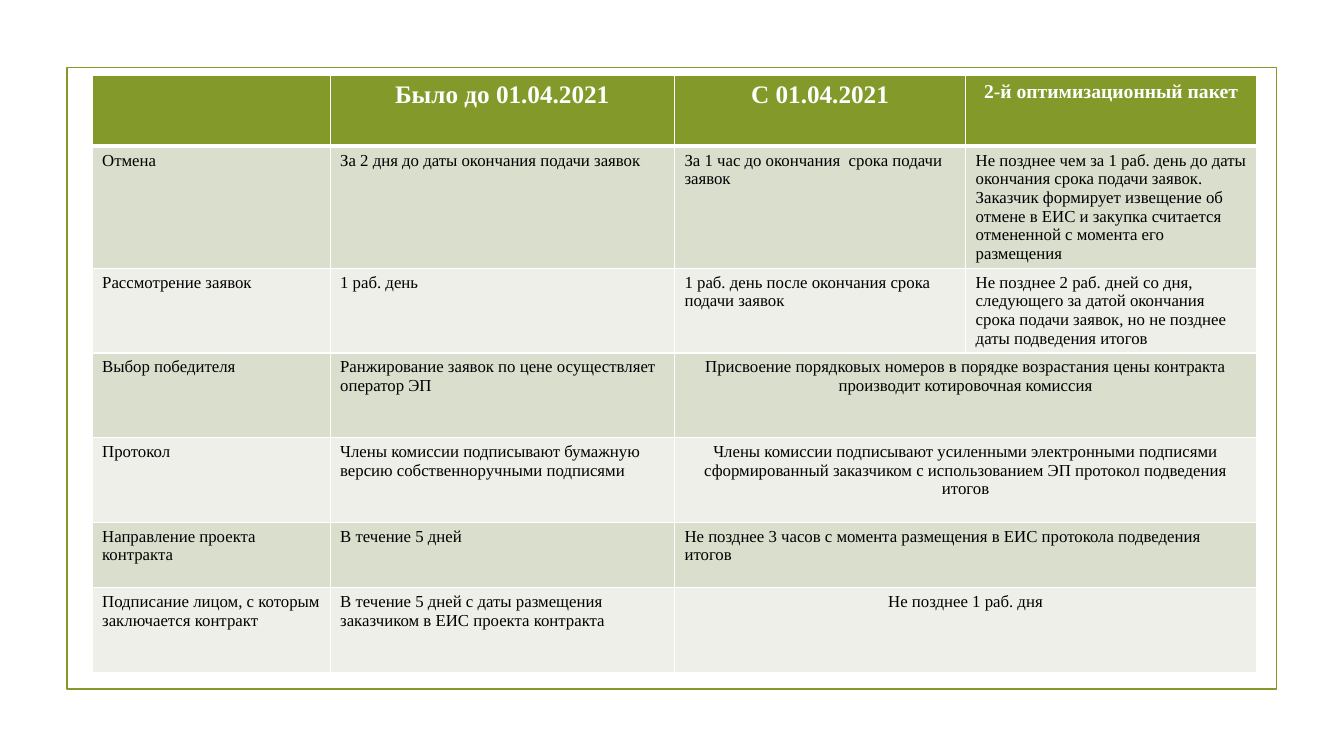
import pptx
import pptx.dml.color
import pptx.enum.shapes
import pptx.enum.text
import pptx.oxml
import pptx.oxml.ns
import pptx.util

Pt = pptx.util.Pt
CENTER = pptx.enum.text.PP_ALIGN.CENTER
LEFT = pptx.enum.text.PP_ALIGN.LEFT
FONT = "Times New Roman"
GREEN, WHITE, BLACK = "83992A", "FFFFFF", "000000"
BANDS = ["D9DECD", "EDEFE8"]
COL_WIDTHS = [170, 246, 208, 208]
ROW_HEIGHTS = [50.4, 86.4, 60.5, 60.5, 60.5, 46.8, 60.5]

HEADERS = [("", 18), ("Было до 01.04.2021", 18), ("С 01.04.2021", 18),
           ("2-й оптимизационный пакет", 14)]
ROWS = [
    ["Отмена", "За 2 дня до даты окончания подачи заявок",
     "За 1 час до окончания  срока подачи заявок",
     "Не позднее чем за 1 раб. день до даты окончания срока подачи заявок.\n"
     "Заказчик формирует извещение об отмене в ЕИС и закупка считается "
     "отмененной с момента его размещения"],
    ["Рассмотрение заявок", "1 раб. день",
     "1 раб. день после окончания срока подачи заявок",
     "Не позднее 2 раб. дней со дня, следующего за датой окончания срока "
     "подачи заявок, но не позднее даты подведения итогов"],
    ["Выбор победителя",
     "Ранжирование заявок по цене осуществляет оператор ЭП",
     "Присвоение порядковых номеров в порядке возрастания цены контракта "
     "производит котировочная комиссия"],
    ["Протокол",
     "Члены комиссии подписывают бумажную версию собственноручными подписями",
     "Члены комиссии подписывают усиленными электронными подписями "
     "сформированный заказчиком с использованием ЭП протокол подведения итогов"],
    ["Направление проекта контракта", "В течение 5 дней",
     "Не позднее 3 часов с момента размещения в ЕИС протокола подведения итогов"],
    ["Подписание лицом, с которым заключается контракт",
     "В течение 5 дней с даты размещения заказчиком в ЕИС проекта контракта",
     "Не позднее 1 раб. дня"],
]
LEFT_MERGED_ROW = 5


def rgb(color):
    return pptx.dml.color.RGBColor.from_string(color)


def set_borders(cell, bottom):
    tcPr = cell._tc.get_or_add_tcPr()
    widths = {"lnL": 1, "lnR": 1, "lnT": 1, "lnB": bottom}
    for i, (side, width) in enumerate(widths.items()):
        tcPr.insert(i, pptx.oxml.parse_xml(
            f'<a:{side} {pptx.oxml.ns.nsdecls("a")} w="{Pt(width)}"><a:solidFill>'
            f'<a:srgbClr val="{WHITE}"/></a:solidFill></a:{side}>'))


def style_cell(cell, fill, bottom=1):
    cell.fill.solid()
    cell.fill.fore_color.rgb = rgb(fill)
    set_borders(cell, bottom)


def write_cell(cell, text, size, color, bold=False, align=LEFT):
    cell.text = text
    for p in cell.text_frame.paragraphs:
        p.alignment = align
        p.font.name = FONT
        p.font.size = Pt(size)
        p.font.bold = bold
        p.font.color.rgb = rgb(color)


def add_frame(slide, x, y, w, h):
    sp = slide.shapes.add_shape(pptx.enum.shapes.MSO_SHAPE.RECTANGLE,
                                Pt(x), Pt(y), Pt(w), Pt(h))
    sp.shadow.inherit = False
    sp.fill.background()
    sp.line.color.rgb = rgb(GREEN)
    sp.line.width = Pt(1.25)


def add_comparison_table(slide, x, y):
    table = slide.shapes.add_table(
        len(ROW_HEIGHTS), len(COL_WIDTHS), Pt(x), Pt(y),
        Pt(sum(COL_WIDTHS)), Pt(sum(ROW_HEIGHTS))).table
    for col, width in zip(table.columns, COL_WIDTHS):
        col.width = Pt(width)
    for row, height in zip(table.rows, ROW_HEIGHTS):
        row.height = Pt(height)
    for c, (text, size) in enumerate(HEADERS):
        style_cell(table.cell(0, c), GREEN, bottom=3)
        write_cell(table.cell(0, c), text, size, WHITE, True, CENTER)
    for r, texts in enumerate(ROWS, 1):
        for c in range(len(COL_WIDTHS)):
            style_cell(table.cell(r, c), BANDS[(r - 1) % 2])
        merged = len(texts) < len(COL_WIDTHS)
        if merged:
            table.cell(r, 2).merge(table.cell(r, 3))
        for c, text in enumerate(texts):
            centered = merged and c == 2 and r != LEFT_MERGED_ROW
            write_cell(table.cell(r, c), text, 12, BLACK,
                       align=CENTER if centered else LEFT)


def main():
    prs = pptx.Presentation()
    prs.slide_width, prs.slide_height = Pt(960), Pt(540)
    slide = prs.slides.add_slide(prs.slide_layouts[6])
    add_frame(slide, 47.8, 48.2, 864, 444)
    add_comparison_table(slide, 65.8, 54)
    prs.save("out.pptx")


if __name__ == "__main__":
    main()
